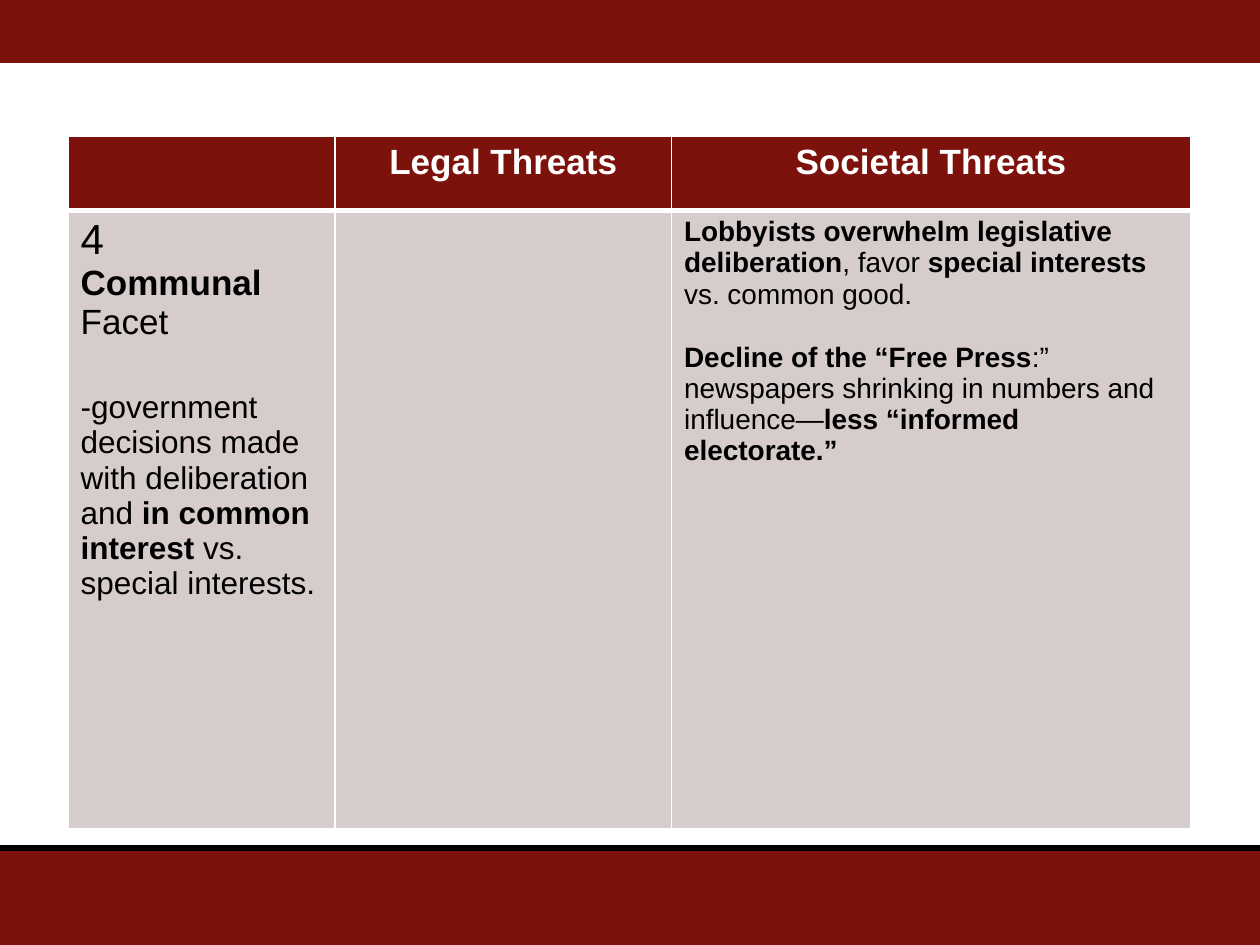
import pptx
import pptx.dml.color
import pptx.enum.shapes
import pptx.enum.text
import pptx.oxml
import pptx.util
from lxml import etree

Inches = pptx.util.Inches
Pt = pptx.util.Pt
ALIGN = pptx.enum.text.PP_ALIGN

MAROON, ROSE, GREY = "7D110C", "D7CCCC", "B0B2B4"
WHITE, BLACK = "FFFFFF", "000000"
DRAWING = "http://schemas.openxmlformats.org/drawingml/2006/main"


def color(value):
    return pptx.dml.color.RGBColor.from_string(value)


class SlideBuilder:
    font_name = "Arial"

    def __init__(self, slide):
        self.slide = slide

    def band(self, top, height):
        """Add a full-width maroon band."""
        shape = self.slide.shapes.add_shape(
            pptx.enum.shapes.MSO_SHAPE.RECTANGLE,
            Inches(0), Inches(top), Inches(10), Inches(height))
        shape.shadow.inherit = False
        shape.fill.solid()
        shape.fill.fore_color.rgb = color(MAROON)
        shape.line.fill.background()

    def rule(self, top, line_color, width):
        """Add a full-width horizontal line."""
        line = self.slide.shapes.add_connector(
            pptx.enum.shapes.MSO_CONNECTOR.STRAIGHT,
            Inches(0), Inches(top), Inches(10), Inches(top))
        line.line.color.rgb = color(line_color)
        line.line.width = Pt(width)
        etree.SubElement(line._element.spPr, f"{{{DRAWING}}}effectLst")

    def table(self, left, top, widths, heights):
        frame = self.slide.shapes.add_table(
            len(heights), len(widths), Inches(left), Inches(top),
            Inches(sum(widths)), Inches(sum(heights)))
        table = frame.table
        table.horz_banding = False
        for column, width in zip(table.columns, widths):
            column.width = Inches(width)
        for row, height in zip(table.rows, heights):
            row.height = Inches(height)
        return table

    def cell(self, cell, fill, borders, paragraphs, text_color, align):
        """Fill a cell; each paragraph is (space before, [(text, size, bold)])."""
        cell.fill.solid()
        cell.fill.fore_color.rgb = color(fill)
        self.borders(cell, borders)
        for index, (space, spans) in enumerate(paragraphs):
            frame = cell.text_frame
            para = frame.add_paragraph() if index else frame.paragraphs[0]
            para.alignment = align
            if space:
                para.space_before = Pt(space)
            for text, size, bold in spans:
                span = para.add_run()
                span.text = text
                style = {"name": self.font_name, "size": Pt(size),
                         "bold": bold, "italic": False}
                for name, value in style.items():
                    setattr(span.font, name, value)
                span.font.color.rgb = color(text_color)

    def borders(self, cell, widths):
        """Draw white cell borders, widths in points keyed by side."""
        properties = cell._tc.get_or_add_tcPr()
        for index, (side, width) in enumerate(widths.items()):
            properties.insert(index, pptx.oxml.parse_xml(
                f'<a:ln{side} xmlns:a="{DRAWING}" w="{Pt(width)}">'
                f'<a:solidFill><a:srgbClr val="{WHITE}"/></a:solidFill>'
                f'</a:ln{side}>'))


def main():
    deck = pptx.Presentation()
    deck.slide_width, deck.slide_height = Inches(10), Inches(7.5)
    builder = SlideBuilder(deck.slides.add_slide(deck.slide_layouts[6]))

    builder.band(6.75, 0.75)
    builder.rule(0.48, GREY, 0.75)
    builder.rule(6.73, BLACK, 3.75)
    builder.band(0, 0.5)

    headings = ["", "Legal Threats", "Societal Threats"]
    facet = [
        (0, [("4", 24, False)]),
        (0, [("Communal", 20, True), (" Facet", 20, False)]),
        (27.6, [("-government decisions made with deliberation and ", 18, False),
                ("in common interest ", 18, True),
                ("vs. special interests.", 18, False)]),
    ]
    societal = [
        (0, [("Lobbyists overwhelm legislative deliberation", 16, True),
             (", favor ", 16, False),
             ("special interests ", 16, True),
             ("vs. common good.", 16, False)]),
        (18.4, [("Decline of the “Free Press", 16, True),
                (":” newspapers shrinking in numbers and influence—", 16, False),
                ("less “informed electorate.”", 16, True)]),
    ]

    table = builder.table(0.54, 1.08, [2.12, 2.67, 4.12], [0.59, 4.91])
    header_borders = {"L": 1, "R": 1, "T": 1, "B": 3}
    body_borders = {"L": 1, "R": 1, "T": 3, "B": 1}
    for column, (heading, body) in enumerate(zip(headings, [facet, [], societal])):
        title = [(0, [(heading, 20, True)])] if heading else []
        builder.cell(table.cell(0, column), MAROON, header_borders,
                     title, WHITE, ALIGN.CENTER)
        builder.cell(table.cell(1, column), ROSE, body_borders,
                     body, BLACK, ALIGN.LEFT)

    deck.save("out.pptx")


if __name__ == "__main__":
    main()
